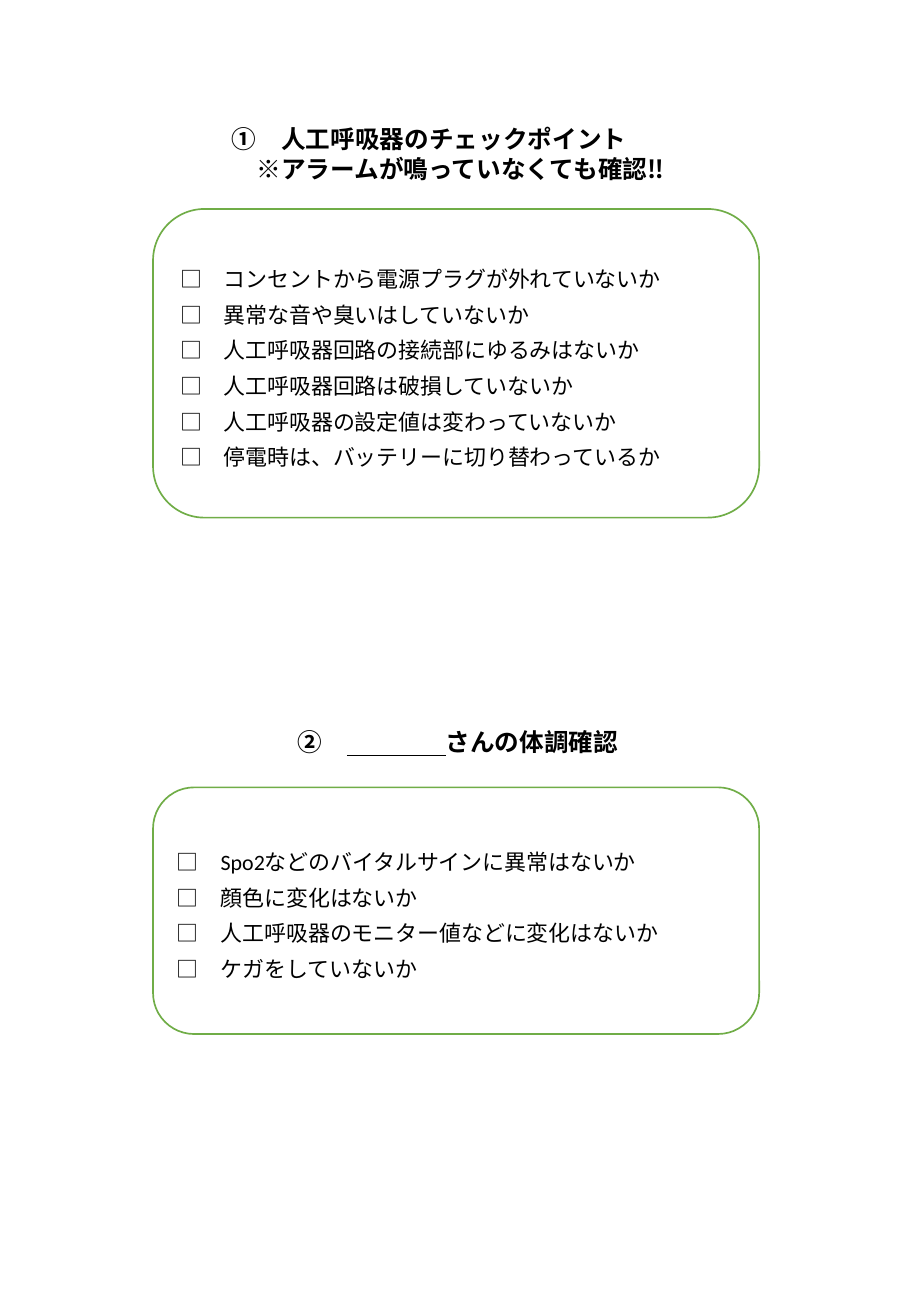
"""Builds a one-page ventilator and patient condition checklist."""
from pptx import Presentation
from pptx.dml.color import RGBColor
from pptx.enum.shapes import MSO_SHAPE as SHAPE
from pptx.enum.text import MSO_ANCHOR as ANCHOR, PP_ALIGN as ALIGN
from pptx.util import Inches, Pt

BLACK = RGBColor(0x00, 0x00, 0x00)
WHITE = RGBColor(0xFF, 0xFF, 0xFF)
GREEN = RGBColor(0x70, 0xAD, 0x47)

TITLE = {"name": "Calibri", "size": Pt(14.6), "bold": True}
ITEM = {"name": "Calibri", "size": Pt(13), "bold": False}

CARD_LEFT, CARD_WIDTH = 1.26, 4.99

SECTIONS = [
    {
        "title_at": (1.81, 0.97, 3.89, 0.59),
        "title": [[("①　人工呼吸器のチェックポイント", False)],
                  [("　※アラームが鳴っていなくても確認‼", False)]],
        "card": (1.72, 2.54),
        "items": ["コンセントから電源プラグが外れていないか",
                  "異常な音や臭いはしていないか",
                  "人工呼吸器回路の接続部にゆるみはないか",
                  "人工呼吸器回路は破損していないか",
                  "人工呼吸器の設定値は変わっていないか",
                  "停電時は、バッテリーに切り替わっているか"],
    },
    {
        "title_at": (2.35, 5.93, 2.92, 0.35),
        "title": [[("②　", False), ("　　　　", True), ("さんの体調確認", False)]],
        "card": (6.48, 2.03),
        "items": ["Spo2などのバイタルサインに異常はないか",
                  "顔色に変化はないか",
                  "人工呼吸器のモニター値などに変化はないか",
                  "ケガをしていないか"],
    },
]


def write(sp, lines, style, spacing=None):
    tf = sp.text_frame
    tf.word_wrap = True
    tf.vertical_anchor = ANCHOR.MIDDLE
    for i, line in enumerate(lines):
        p = tf.add_paragraph() if i else tf.paragraphs[0]
        p.alignment = ALIGN.LEFT
        p.line_spacing = spacing
        for text, underline in line:
            r = p.add_run()
            r.text = text
            for key, value in style.items():
                setattr(r.font, key, value)
            r.font.underline = underline
            r.font.color.rgb = BLACK


prs = Presentation()
prs.slide_width, prs.slide_height = Inches(7.5), Inches(10.83)
s = prs.slides.add_slide(prs.slide_layouts[6])

for section in SECTIONS:
    top, height = section["card"]
    box = [Inches(v) for v in (CARD_LEFT, top, CARD_WIDTH, height)]
    sp = s.shapes.add_shape(SHAPE.ROUNDED_RECTANGLE, *box)
    sp.shadow.inherit = False
    sp.fill.solid()
    sp.fill.fore_color.rgb = WHITE
    sp.line.color.rgb = GREEN
    sp.line.width = Pt(1)
    write(sp, [[("□　" + item, False)] for item in section["items"]], ITEM, Pt(21.1))

    sp = s.shapes.add_textbox(*[Inches(v) for v in section["title_at"]])
    write(sp, section["title"], TITLE)

prs.save("out.pptx")
